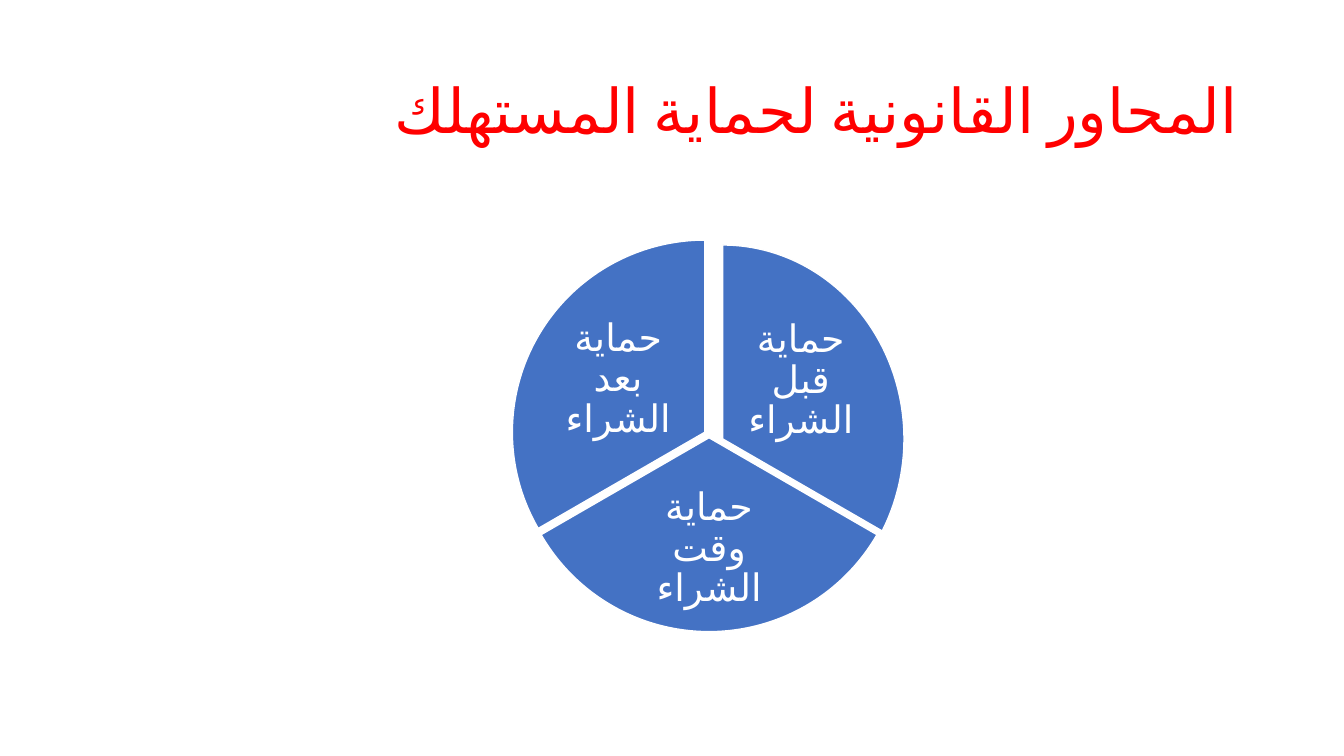
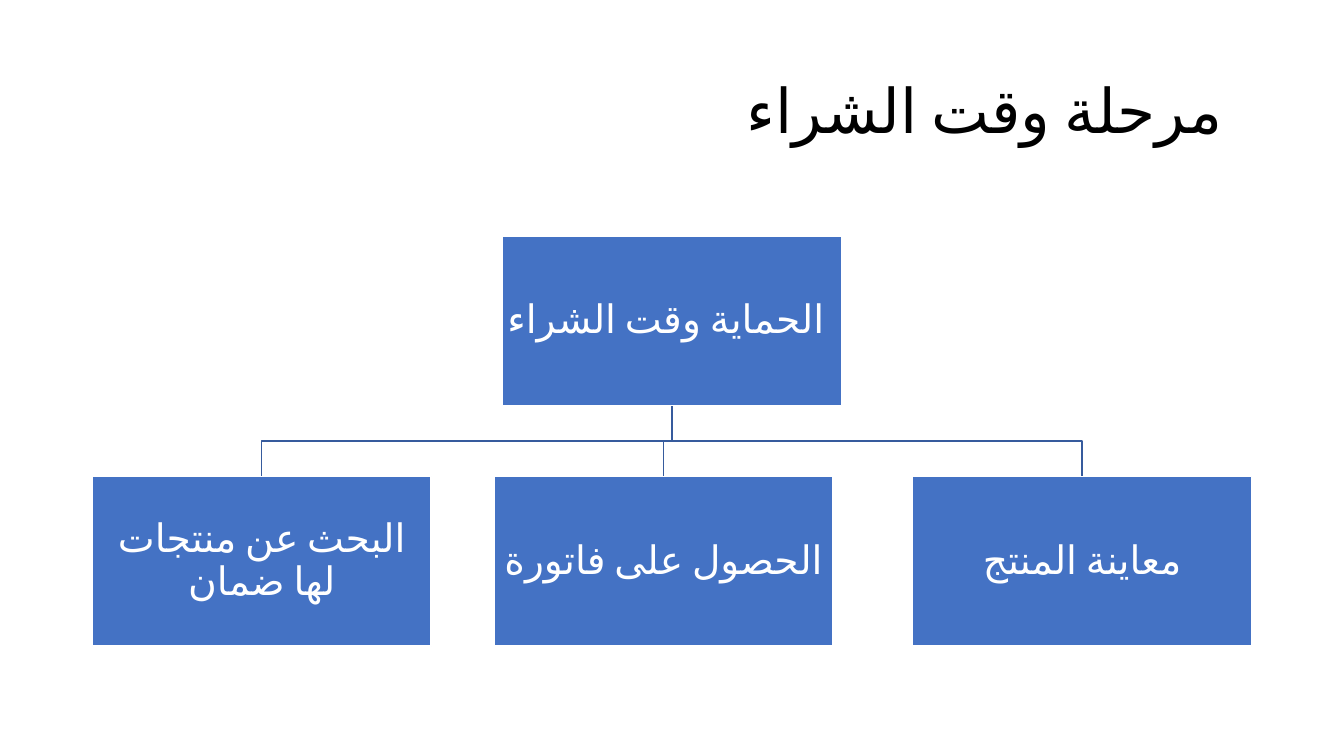
from lxml import etree
from pptx import Presentation
from pptx import util as u
from pptx.dml.color import RGBColor
from pptx.enum import shapes, text
from pptx.oxml import ns

Pt = u.Pt
FONT = "Calibri"
BLUE, LINE_BLUE, WHITE = "4472C4", "365B9D", "FFFFFF"
RED, BLACK = "FF0000", "000000"
TITLE_BOX = (66, 29, 828, 104.5)
PIE_BOX = (366, 171.5, 280, 280)
CHART_BOX = (66, 168.5, 828, 293)


def colour(value):
    return RGBColor.from_string(value)


def points(*lengths):
    return [Pt(length) for length in lengths]


def write_text(shape, wording, size, text_colour, align, insets):
    """Write one right-to-left paragraph; insets are left, top, right, bottom."""
    frame = shape.text_frame
    frame.text = wording
    frame.word_wrap = True
    frame.auto_size = text.MSO_AUTO_SIZE.NONE
    frame.vertical_anchor = text.MSO_ANCHOR.MIDDLE
    (frame.margin_left, frame.margin_top,
     frame.margin_right, frame.margin_bottom) = points(*insets)
    paragraph = frame.paragraphs[0]
    paragraph.alignment = align
    paragraph.line_spacing = 0.9
    paragraph._p.get_or_add_pPr().set("rtl", "1")
    for run in paragraph.runs:
        run.font.name = FONT
        run.font.size = Pt(size)
        run.font.color.rgb = colour(text_colour)
        # Arabic letters take the complex-script font and language
        properties = run._r.get_or_add_rPr()
        properties.set("lang", "ar-SA")
        etree.SubElement(properties, ns.qn("a:cs")).set("typeface", FONT)


def paint(shape, fill, line):
    """Give a shape its fill (or none) and a thin outline."""
    shape.shadow.inherit = False
    if fill:
        shape.fill.solid()
        shape.fill.fore_color.rgb = colour(fill)
    else:
        shape.fill.background()
    shape.line.color.rgb = colour(line)
    shape.line.width = Pt(1)


def add_titled_slide(presentation, wording, title_colour, right_inset):
    slide = presentation.slides.add_slide(presentation.slide_layouts[5])
    title = slide.shapes.title
    title.left, title.top, title.width, title.height = points(*TITLE_BOX)
    write_text(title, wording, 44, title_colour, text.PP_ALIGN.RIGHT,
               (7.2, 3.6, right_inset, 3.6))
    return slide


def add_split_pie(slide, box, slices):
    """Draw equal slices clockwise from the top, each slightly pulled out."""
    left, top = box[:2]
    sweep = 360 / len(slices)
    for index, (wording, slice_box, label_box) in enumerate(slices):
        x, y, width, height = slice_box
        pie = slide.shapes.add_shape(
            shapes.MSO_SHAPE.PIE, *points(left + x, top + y, width, height))
        start = 270 + index * sweep
        for position, angle in enumerate((start, start + sweep)):
            pie.adjustments[position] = angle % 360 * 0.6  # 60000ths / 100000
        paint(pie, BLUE, WHITE)

        x, y, width, height = label_box
        label = slide.shapes.add_textbox(
            *points(left + x, top + y, width, height))
        write_text(label, wording, 27, WHITE, text.PP_ALIGN.CENTER, (2.7,) * 4)


def add_node(slide, left, top, size, wording, right_inset=1.3):
    node = slide.shapes.add_shape(
        shapes.MSO_SHAPE.RECTANGLE, *points(left, top, *size))
    paint(node, BLUE, WHITE)
    write_text(node, wording, 28, WHITE, text.PP_ALIGN.CENTER,
               (1.3, 1.3, right_inset, 1.3))


def add_branch(slide, start, end):
    """Draw a bent line: down, across at half height, down."""
    middle = (start[1] + end[1]) / 2
    builder = slide.shapes.build_freeform(*points(*start))
    corners = [(start[0], middle), (end[0], middle), end]
    builder.add_line_segments([points(*corner) for corner in corners],
                              close=False)
    paint(builder.convert_to_shape(), None, LINE_BLUE)


def add_hierarchy(slide, box, root, children):
    """Place the root centred at the top and the children along the bottom."""
    left, top, width, height = box
    size = node_width, node_height = 242, 121
    root_left = left + (width - node_width) / 2
    child_top = top + height - node_height
    trunk = (left + width / 2, top + node_height)

    # Branches lie behind the boxes
    for offset, _ in children:
        add_branch(slide, trunk, (left + offset + node_width / 2, child_top))
    add_node(slide, root_left, top, size, root, right_inset=10)
    for offset, wording in children:
        add_node(slide, left + offset, child_top, size, wording)


def main():
    presentation = Presentation()
    presentation.slide_width, presentation.slide_height = points(960, 540)

    # Legal areas: wording, slice box and label box, relative to the pie box
    slide = add_titled_slide(
        presentation, "المحاور القانونية لحماية المستهلك", RED, 9)
    add_split_pie(slide, PIE_BOX, [
        ("حماية قبل الشراء", (20.7, 3.5, 259, 277), (162, 54.5, 88, 92)),
        ("حماية وقت الشراء", (2, 2.7, 277, 277), (78, 177.5, 125, 86)),
        ("حماية بعد الشراء", (0, 0, 275, 274.5), (29, 54, 93, 91.5)),
    ])

    # Purchase stage: children with their offset from the left edge
    slide = add_titled_slide(presentation, "مرحلة وقت الشراء", BLACK, 20)
    add_hierarchy(slide, CHART_BOX, "الحماية وقت الشراء", [
        (0, "البحث عن منتجات لها ضمان"),
        (287, "الحصول على فاتورة"),
        (586, "معاينة المنتج"),
    ])
    presentation.save("out.pptx")


if __name__ == "__main__":
    main()
